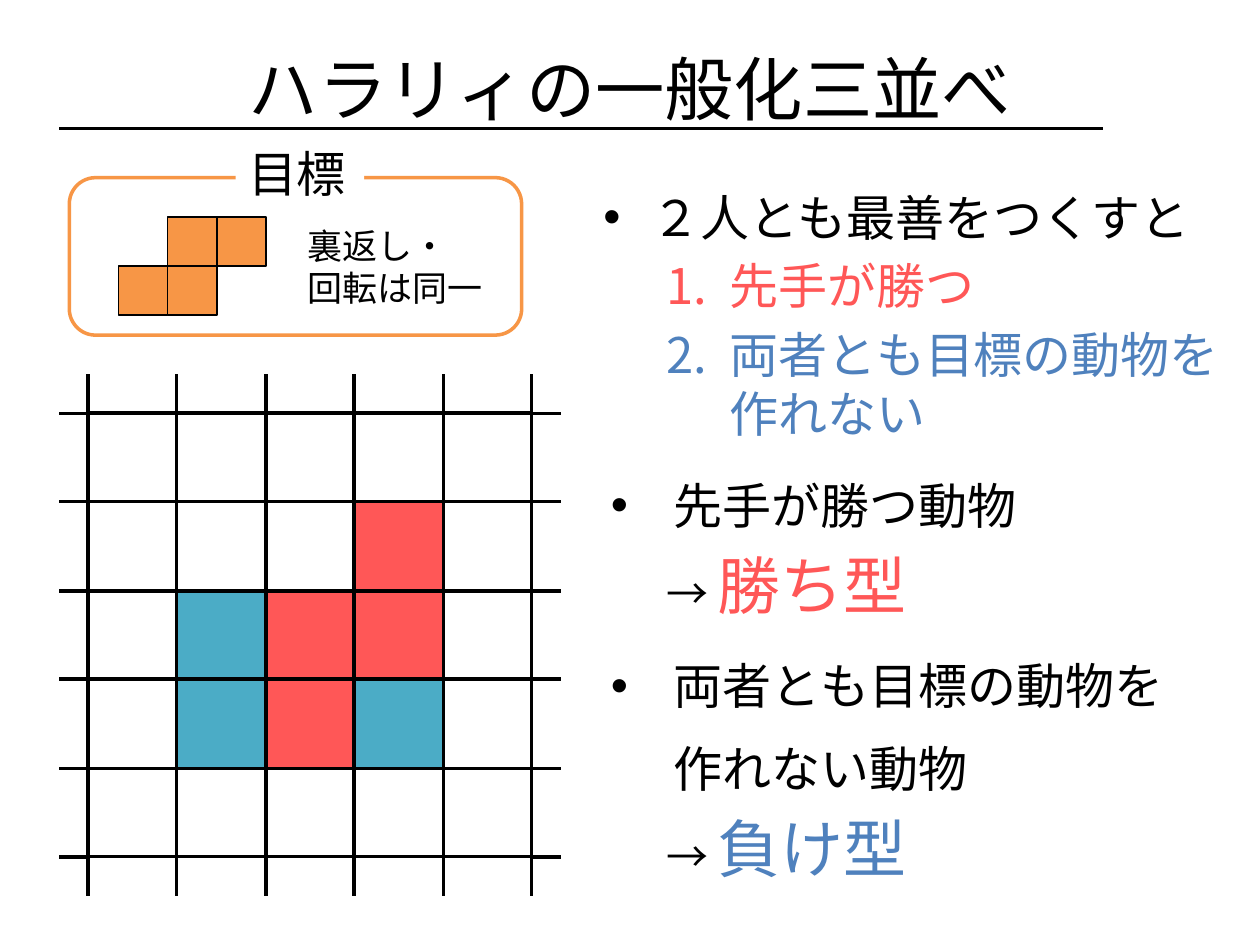
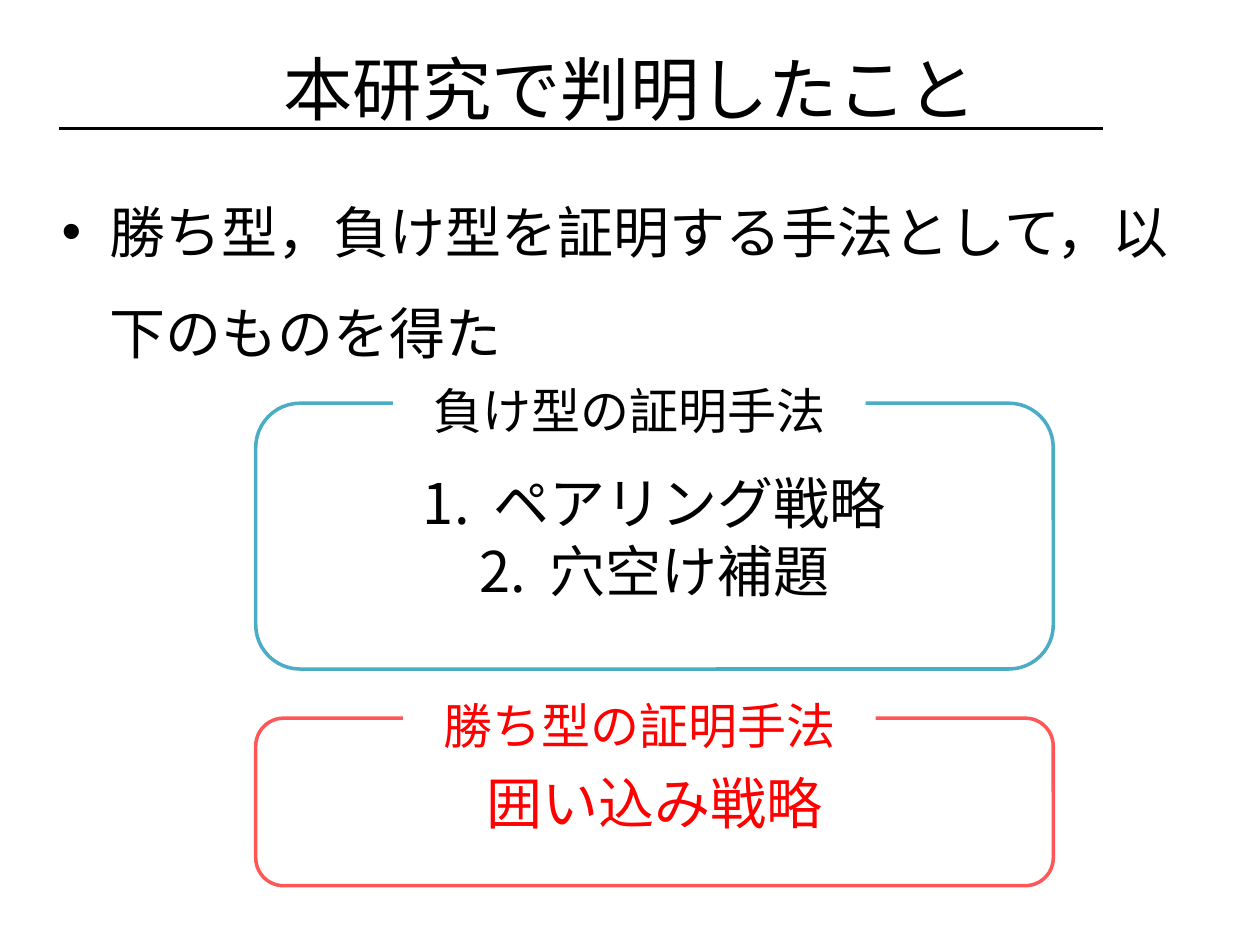
from dataclasses import dataclass, field

from pptx import Presentation
from pptx import util as u
from pptx.dml.color import RGBColor
from pptx.enum import shapes, text
from pptx.oxml.ns import qn
from lxml import etree

EMU_PER_PX = 9144  # 100 px to the inch


@dataclass(frozen=True)
class Theme:
    font: str = "Calibri"
    black: str = "000000"
    white: str = "FFFFFF"
    coral: str = "FF5757"
    red: str = "FF0000"
    blue: str = "4F81BD"
    teal: str = "4BACC6"
    orange: str = "F79646"
    title: float = 39.6
    emphasis: int = 36
    large: int = 32
    body: int = 28
    arrow: int = 24
    note: int = 20
    rule: int = 2
    thin: int = 1


T = Theme()


@dataclass
class Para:
    """Runs are (text, size, colour); "\\n" in a text is a line break."""
    runs: list
    bullet: str = ""
    level: int = 0
    margin: int = 0
    hang: int = 0
    fmt: dict = field(default_factory=dict)


def px(n):
    return u.Emu(n * EMU_PER_PX)


def set_attrs(obj, values):
    for name, value in values.items():
        setattr(obj, name, value)


def add_bullet(p_pr, bullet):
    """Number the paragraph for "1.", otherwise use the given character."""
    if bullet == "1.":
        etree.SubElement(p_pr, qn("a:buFont")).set("typeface", "+mj-lt")
        etree.SubElement(p_pr, qn("a:buAutoNum")).set("type", "arabicPeriod")
    elif bullet:
        etree.SubElement(p_pr, qn("a:buFont")).set("typeface", "Arial")
        etree.SubElement(p_pr, qn("a:buChar")).set("char", bullet)


def add_run(p, words, size, colour):
    for i, line in enumerate(words.split("\n")):
        if i:
            p.add_line_break()
        r = p.add_run()
        r.text = line
        set_attrs(r.font, {"name": T.font, "size": u.Pt(size)})
        r.font.color.rgb = RGBColor.from_string(colour)


def write(tf, paras, anchor=text.MSO_ANCHOR.TOP):
    set_attrs(tf, {"word_wrap": True, "auto_size": text.MSO_AUTO_SIZE.NONE,
                   "vertical_anchor": anchor})
    for i, para in enumerate(paras):
        p = tf.add_paragraph() if i else tf.paragraphs[0]
        set_attrs(p, {"alignment": text.PP_ALIGN.LEFT, "level": para.level, **para.fmt})
        p_pr = p._p.get_or_add_pPr()
        p_pr.set("marL", str(px(para.margin)))
        p_pr.set("indent", str(px(-para.hang)))
        add_bullet(p_pr, para.bullet)
        for run in para.runs:
            add_run(p, *run)


def centred(words, size, colour, **options):
    return Para([(words, size, colour)], fmt={"alignment": text.PP_ALIGN.CENTER}, **options)


def body_para(runs, spacing=1.0, **options):
    """Paragraph of a body text, with a fifth of its type size above it."""
    size = max(r[1] for r in runs)
    fmt = {"line_spacing": spacing, "space_before": u.Pt(round(size * 0.2, 1))}
    return Para(runs, fmt=fmt, **options)


def add_box(parent, box, fill=T.white, edge=None, width=T.rule,
            kind=shapes.MSO_SHAPE.RECTANGLE):
    sp = parent.add_shape(kind, *map(px, box))
    sp.shadow.inherit = False
    sp.fill.solid()
    sp.fill.fore_color.rgb = RGBColor.from_string(fill)
    if edge:
        sp.line.color.rgb = RGBColor.from_string(edge)
        sp.line.width = u.Pt(width)
    else:
        sp.line.fill.background()
    return sp


def add_frame(parent, box, edge):
    return add_box(parent, box, edge=edge, kind=shapes.MSO_SHAPE.ROUNDED_RECTANGLE)


def add_label(parent, box, paras):
    write(add_box(parent, box).text_frame, paras)


def add_line(parent, x1, y1, x2, y2):
    line = parent.add_connector(shapes.MSO_CONNECTOR.STRAIGHT, *map(px, (x1, y1, x2, y2)))
    line.line.color.rgb = RGBColor.from_string(T.black)
    line.line.width = u.Pt(T.rule)
    etree.SubElement(line._element.spPr, qn("a:effectLst"))


def add_body(s, box, paras):
    write(s.shapes.add_textbox(*map(px, box)).text_frame, paras)


def add_titled_slide(prs, title):
    s = prs.slides.add_slide(prs.slide_layouts[5])
    sp = s.shapes.title
    set_attrs(sp, dict(zip(("left", "top", "width", "height"), map(px, (50, 30, 900, 79)))))
    write(sp.text_frame, [centred(title, T.title, T.black)], text.MSO_ANCHOR.MIDDLE)
    add_line(s.shapes, 47, 102, 875, 102)
    return s


def add_board(s):
    """Five by five cells whose grid lines run on past the edge."""
    size, left, top, side = 5, 70, 328, 352
    over_x, over_y = 23, 31
    played = {(1, 3): T.coral, (2, 2): T.coral, (2, 3): T.coral, (3, 2): T.coral,
              (2, 1): T.teal, (3, 1): T.teal, (3, 3): T.teal}
    steps = [round(side * i / size) for i in range(size + 1)]
    board = s.shapes.add_group_shape().shapes
    for row in range(size):
        for col in range(size):
            box = (left + steps[col], top + steps[row],
                   steps[col + 1] - steps[col], steps[row + 1] - steps[row])
            add_box(board, box, played.get((row, col), T.white), T.black)
    for step in steps:
        x, y = left + step, top + step
        for end, out in ((left, -over_x), (left + side, over_x)):
            add_line(board, end, y, end + out, y)
        for end, out in ((top, -over_y), (top + side, over_y)):
            add_line(board, x, end, x, end + out)


def add_goal(s):
    goal = s.shapes.add_group_shape().shapes
    add_frame(goal, (55, 141, 359, 125), T.orange)
    cell = 39
    for row, col in ((1, 0), (1, 1), (0, 2), (0, 1)):
        box = (94 + col * cell, 172 + row * cell, cell, cell)
        add_box(goal, box, T.orange, T.black, T.thin)
    add_label(goal, (187, 109, 102, 57), [Para([("目標", T.body, T.black)])])
    add_label(s.shapes, (234, 173, 172, 77),
              [Para([(line, T.note, T.black)]) for line in ("裏返し・", "回転は同一")])


def add_method(s, box, edge, caption_box, caption, colour, paras):
    """Rounded frame around proof methods, with its caption set in the top edge."""
    frame = add_frame(s.shapes, box, edge)
    write(frame.text_frame, paras, text.MSO_ANCHOR.MIDDLE)
    add_label(s.shapes, caption_box, [centred(caption, T.body, colour)])


def point(words, margin=56, hang=50):
    return body_para([(words, T.body, T.black)], 1.4, bullet="•", margin=margin, hang=hang)


def outcome(words, colour):
    return body_para([(words, T.body, colour)], bullet="1.", level=1, margin=100, hang=50)


def verdict(words, colour):
    return body_para([("→ ", T.arrow, T.black), (words, T.emphasis, colour)],
                     level=1, margin=100, hang=50)


def build_game_slide(prs):
    s = add_titled_slide(prs, "ハラリィの一般化三並べ")
    add_body(s, (469, 125, 523, 583), [
        point("２人とも最善をつくすと", 38, 38),
        outcome("先手が勝つ", T.coral),
        outcome("両者とも目標の動物を作れない", T.blue),
        point("先手が勝つ動物"),
        verdict("勝ち型", T.coral),
        point("両者とも目標の動物を\n作れない動物"),
        verdict("負け型", T.blue),
    ])
    add_board(s)
    add_goal(s)


def build_results_slide(prs):
    s = add_titled_slide(prs, "本研究で判明したこと")
    finding = "勝ち型，負け型を証明する手法として，以下のものを得た"
    add_body(s, (39, 125, 906, 219), [
        body_para([(finding, T.large, T.black)], 1.5, bullet="•", margin=38, hang=38)])
    add_method(s, (203, 570, 633, 133), T.coral, (320, 547, 375, 57), "勝ち型の証明手法",
               T.red, [centred("囲い込み戦略", T.large, T.red)])
    add_method(s, (203, 320, 633, 211), T.teal, (312, 297, 375, 57), "負け型の証明手法",
               T.black, [centred(name, T.large, T.black, bullet="1.", margin=56, hang=56)
                         for name in ("ペアリング戦略", "穴空け補題")])


def main():
    prs = Presentation()
    set_attrs(prs, {"slide_width": px(1000), "slide_height": px(750)})
    build_game_slide(prs)
    build_results_slide(prs)
    prs.save("out.pptx")


if __name__ == "__main__":
    main()
